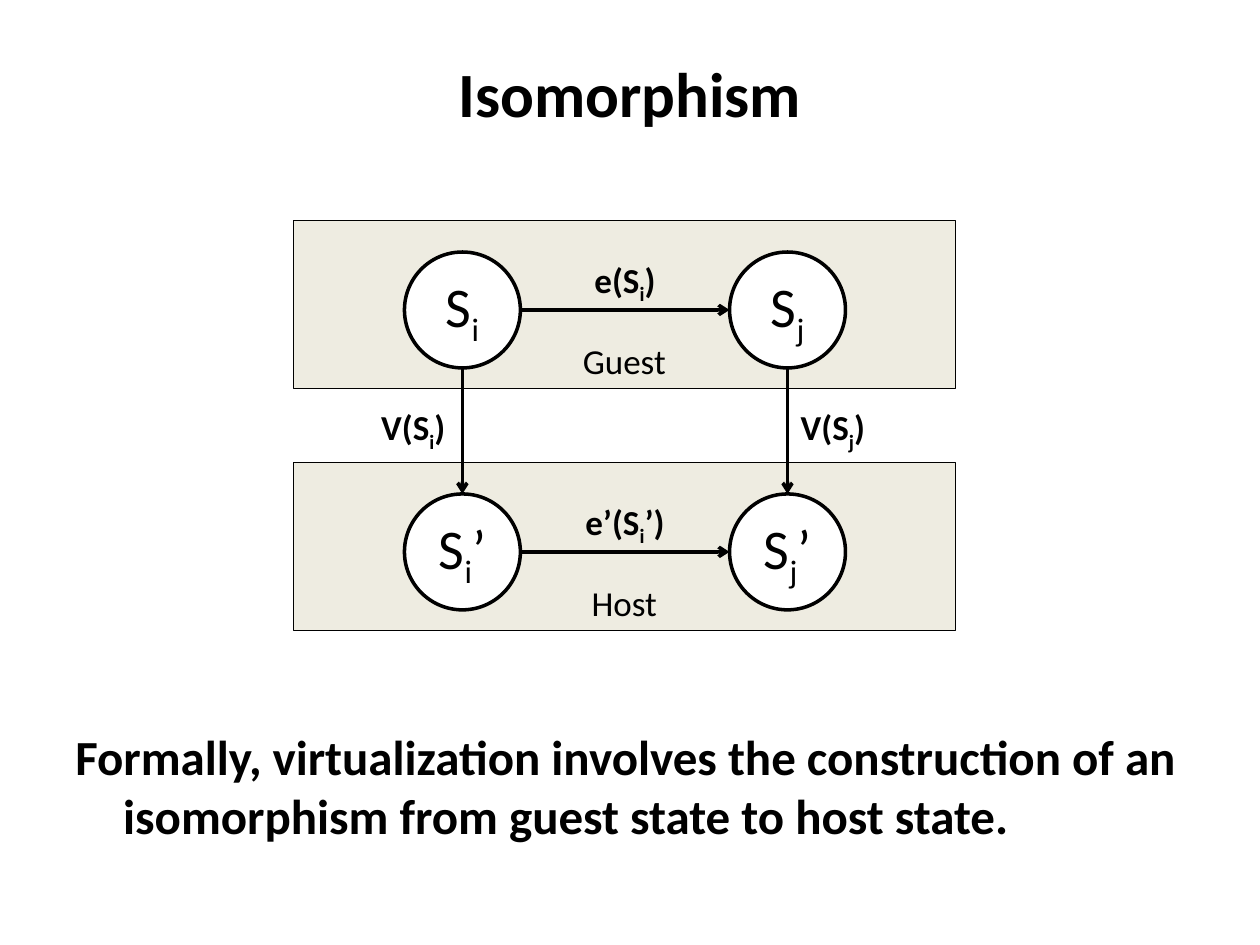
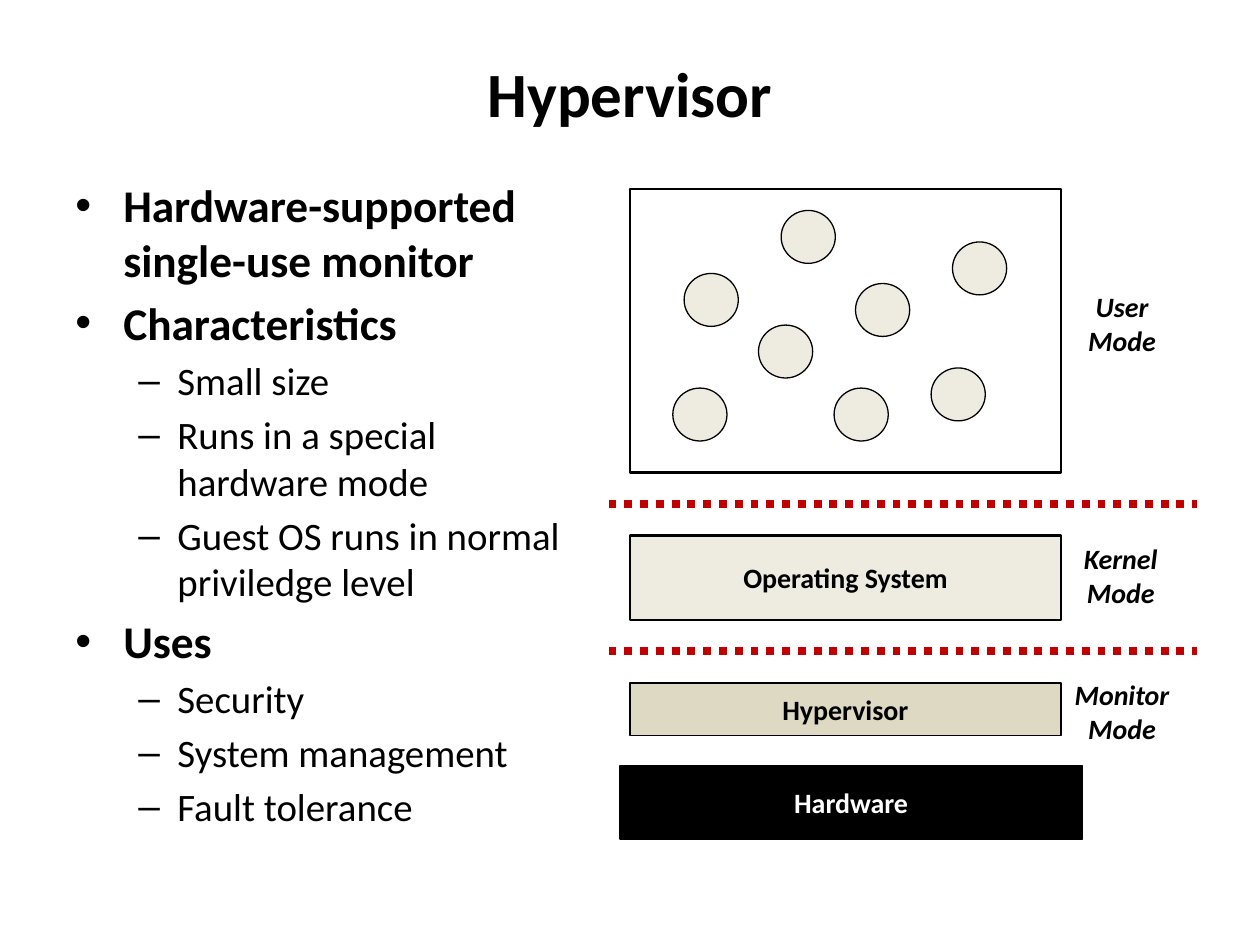
from lxml import etree
from pptx import Presentation
from pptx.dml.color import RGBColor
from pptx.enum.dml import MSO_LINE
from pptx.enum.shapes import MSO_CONNECTOR, MSO_SHAPE
from pptx.enum.text import MSO_ANCHOR, PP_ALIGN
from pptx.oxml.ns import qn
from pptx.util import Inches, Pt

RECT, OVAL = MSO_SHAPE.RECTANGLE, MSO_SHAPE.OVAL
STRAIGHT = MSO_CONNECTOR.STRAIGHT
LEFT, CENTER = PP_ALIGN.LEFT, PP_ALIGN.CENTER
TOP, MIDDLE, BOTTOM = MSO_ANCHOR.TOP, MSO_ANCHOR.MIDDLE, MSO_ANCHOR.BOTTOM
DOTTED = MSO_LINE.ROUND_DOT

FONT = "Calibri"
BLACK = RGBColor(0x00, 0x00, 0x00)
WHITE = RGBColor(0xFF, 0xFF, 0xFF)
CREAM = RGBColor(0xEE, 0xEC, 0xE1)
TAN = RGBColor(0xDD, 0xD9, 0xC3)
RED = RGBColor(0xC0, 0x00, 0x00)

# Content of "Isomorphism"; the character after "_" is a subscript
STATEMENT = ("Formally, virtualization involves the construction of an "
             "isomorphism from guest state to host state.")
MACHINES = [  # name, states, step between them
    ("Guest", ("S_i", "S_j"), "e(S_i)"),
    ("Host", ("S_i’", "S_j’"), "e’(S_i’)"),
]
MAPPINGS = [("V(S_i)", 2.92), ("V(S_j)", 6.25)]  # label, left

# Content of "Hypervisor"
OUTLINE = [
    ("Hardware-supported single-use monitor", []),
    ("Characteristics", ["Small size", "Runs in a special hardware mode",
                         "Guest OS runs in normal priviledge level"]),
    ("Uses", ["Security", "System management", "Fault tolerance"]),
]
LAYERS = [  # text, box, fill, line width, text colour
    ("Hardware", (4.92, 6.08, 3.67, 0.58), BLACK, 0.75, WHITE),
    ("Hypervisor", (5, 5.42, 3.42, 0.42), TAN, 0.75, BLACK),
    ("Operating System", (5, 4.25, 3.42, 0.67), CREAM, 1.5, BLACK),
    ("", (5, 1.5, 3.42, 2.25), WHITE, 1.5, BLACK),
]
PROCESSES = [(6.02, 2.58), (6.62, 3.08), (5.34, 3.08), (6.79, 2.25),
             (7.39, 2.92), (5.43, 2.17), (6.2, 1.67), (7.56, 1.92)]
BOUNDARIES = [4, 5.17]
MODES = [("User", (8.53, 2.25, 0.75, 0.64)),
         ("Kernel", (8.5, 4.25, 0.79, 0.64)),
         ("Monitor", (8.42, 5.33, 0.97, 0.64))]


def write(p, text, size=20, color=BLACK, bold=False, italic=False, align=CENTER):
    """Fill a paragraph, lowering each character that follows an underscore."""
    p.alignment = align
    first, *rest = text.split("_")
    pieces = [(first, False)]
    for part in rest:
        pieces += [(part[0], True), (part[1:], False)]
    for piece, lowered in pieces:
        if not piece:
            continue
        r = p.add_run()
        r.text = piece
        f = r.font
        f.name, f.size, f.bold, f.italic = FONT, Pt(size), bold, italic
        f.color.rgb = color
        if lowered:
            r._r.get_or_add_rPr().set("baseline", "-25000")


def indent(p, left, hanging, bullet=None):
    pPr = p._p.get_or_add_pPr()
    pPr.set("marL", str(Inches(left)))
    pPr.set("indent", str(-Inches(hanging)))
    if bullet:
        etree.SubElement(pPr, qn("a:buFont")).set("typeface", "Arial")
        etree.SubElement(pPr, qn("a:buChar")).set("char", bullet)


def add_text(s, box, lines, wrap=False, **fmt):
    tf = s.shapes.add_textbox(*map(Inches, box)).text_frame
    tf.word_wrap = wrap
    for n, line in enumerate(lines):
        write(tf.add_paragraph() if n else tf.paragraphs[0], line, **fmt)
    return tf


def add_box(s, kind, box, fill, width, text="", anchor=MIDDLE, **fmt):
    sp = s.shapes.add_shape(kind, *map(Inches, box))
    sp.shadow.inherit = False
    sp.fill.solid()
    sp.fill.fore_color.rgb = fill
    sp.line.color.rgb = BLACK
    sp.line.width = Pt(width)
    if text:
        tf = sp.text_frame
        tf.word_wrap = False
        tf.vertical_anchor = anchor
        write(tf.paragraphs[0], text, **fmt)


def add_line(s, x1, y1, x2, y2, color=BLACK, width=2, dash=None, arrow=False):
    c = s.shapes.add_connector(STRAIGHT, *map(Inches, (x1, y1, x2, y2)))
    c.line.color.rgb = color
    c.line.width = Pt(width)
    if dash:
        c.line.dash_style = dash
    if arrow:
        etree.SubElement(c.get_or_add_ln(), qn("a:tailEnd")).set("type", "arrow")
    etree.SubElement(c._element.spPr, qn("a:effectLst"))


def add_slide(prs, title):
    s = prs.slides.add_slide(prs.slide_layouts[5])
    sp = s.shapes.title
    sp.left, sp.top, sp.width, sp.height = map(Inches, (0.5, 0.3, 9, 0.87))
    sp.text_frame.vertical_anchor = MIDDLE
    write(sp.text_frame.paragraphs[0], title, size=36, bold=True)
    return s


def isomorphism(prs):
    s = add_slide(prs, "Isomorphism")
    tf = add_text(s, (0.5, 5.72, 9, 1.03), [STATEMENT], wrap=True,
                  size=28, bold=True, align=LEFT)
    indent(tf.paragraphs[0], 0.38, 0.38)

    # Machines with their states, on a two by two grid
    size = 0.92
    columns = (3.21, 5.79)
    bands = (1.75, 3.67)
    rows = [top + 0.25 for top in bands]
    for (name, states, step), band, row in zip(MACHINES, bands, rows):
        add_box(s, RECT, (2.33, band, 5.25, 1.33), CREAM, 0.25, name, anchor=BOTTOM)
        for state, left in zip(states, columns):
            add_box(s, OVAL, (left, row, size, size), WHITE, 2, state, size=32)
        middle = row + size / 2
        add_line(s, columns[0] + size, middle, columns[1], middle, arrow=True)
        add_text(s, (4.54, row, 0.84, 0.44), [step], bold=True)

    # Mappings from guest to host
    for (label, label_left), left in zip(MAPPINGS, columns):
        middle = left + size / 2
        add_line(s, middle, rows[0] + size, middle, rows[1], arrow=True)
        add_text(s, (label_left, 3.17, 0.72, 0.44), [label], bold=True)


def hypervisor(prs):
    s = add_slide(prs, "Hypervisor")

    # Outline
    tf = s.shapes.add_textbox(*map(Inches, (0.5, 1.36, 4.25, 5.37))).text_frame
    tf.word_wrap = True
    for n, (heading, points) in enumerate(OUTLINE):
        p = tf.add_paragraph() if n else tf.paragraphs[0]
        indent(p, 0.38, 0.38, "•")
        write(p, heading, size=25.9, bold=True, align=LEFT)
        if n:
            p.space_before = Pt(5)
        for point in points:
            p = tf.add_paragraph()
            p.level = 1
            indent(p, 0.81, 0.31, "–")
            write(p, point, size=22.2, align=LEFT)
            p.space_before = Pt(4.2)

    # Layers, processes and the boundaries between modes
    for text, box, fill, width, color in LAYERS:
        add_box(s, RECT, box, fill, width, text, size=16, bold=True, color=color)
    for left, top in PROCESSES:
        add_box(s, OVAL, (left, top, 0.43, 0.42), CREAM, 0.75)
    for y in BOUNDARIES:
        add_line(s, 4.83, y, 9.5, y, color=RED, width=4.5, dash=DOTTED)
    for mode, box in MODES:
        add_text(s, box, [mode, "Mode"], size=16, bold=True, italic=True)


def main():
    prs = Presentation()
    prs.slide_width, prs.slide_height = Inches(10), Inches(7.5)
    isomorphism(prs)
    hypervisor(prs)
    prs.save("out.pptx")


if __name__ == "__main__":
    main()
